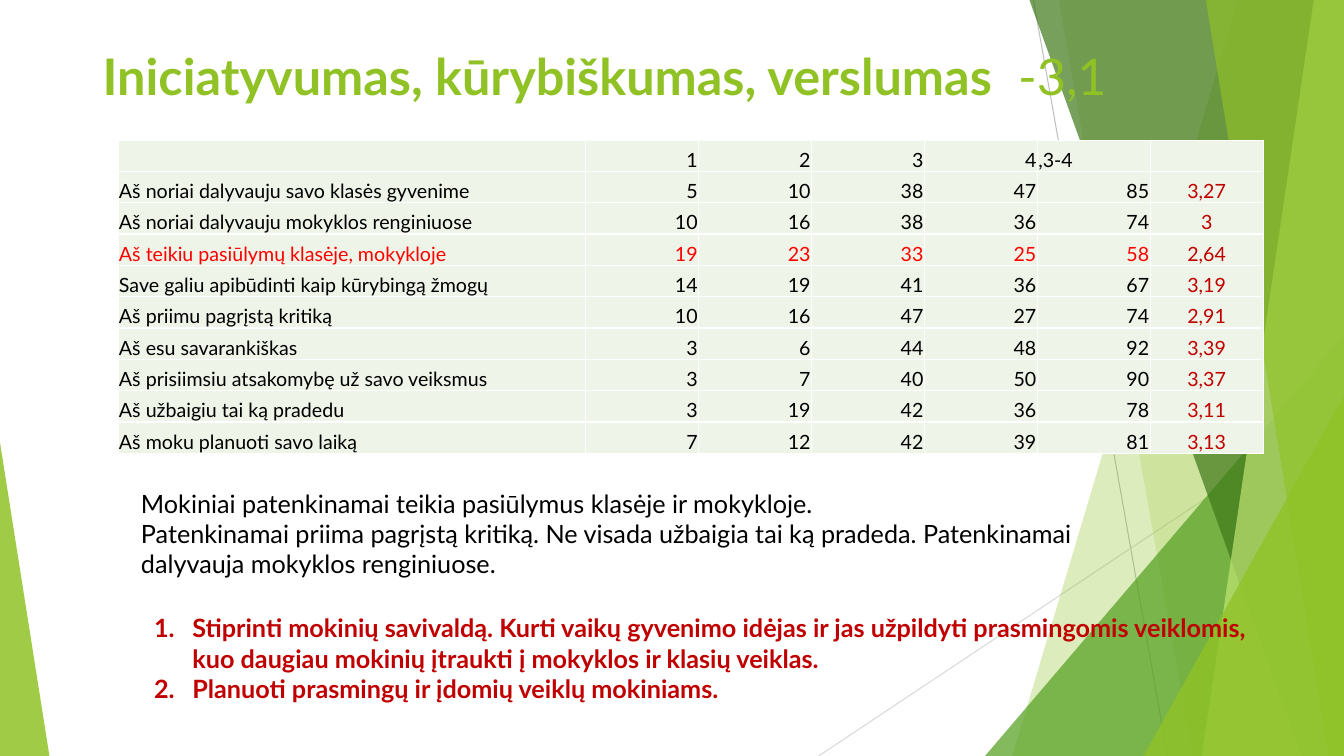
import lxml.etree
import pptx
import pptx.dml.color
import pptx.enum.shapes
import pptx.enum.text
import pptx.oxml.ns
import pptx.util

PX = 9144  # EMU per px, 100 px to the inch
SLIDE_W, SLIDE_H = 1333, 750
FONT = "Lato"

RGB = pptx.dml.color.RGBColor
LIME = RGB(0x90, 0xC2, 0x26)
GREEN = RGB(0x54, 0xA0, 0x21)
FOREST = RGB(0x3F, 0x78, 0x19)
PALE_LIME = RGB(0xC0, 0xE4, 0x74)
GREY = RGB(0xBF, 0xBF, 0xBF)
LIGHT_GREY = RGB(0xD9, 0xD9, 0xD9)
CELL = RGB(0xEE, 0xF4, 0xE8)
WHITE = RGB(0xFF, 0xFF, 0xFF)
BLACK = RGB(0, 0, 0)
RED = RGB(0xFF, 0, 0)
DARK_RED = RGB(0xC0, 0, 0)

ALIGN = pptx.enum.text.PP_ALIGN
WEAK_ROW = 3

SURVEY = [
    ("", "1", "2", "3", "4", ",3-4", ""),
    ("Aš noriai dalyvauju savo klasės gyvenime", 5, 10, 38, 47, 85, "3,27"),
    ("Aš noriai dalyvauju mokyklos renginiuose", 10, 16, 38, 36, 74, "3"),
    ("Aš teikiu pasiūlymų klasėje, mokykloje", 19, 23, 33, 25, 58, "2,64"),
    ("Save galiu apibūdinti kaip kūrybingą žmogų", 14, 19, 41, 36, 67, "3,19"),
    ("Aš priimu pagrįstą kritiką", 10, 16, 47, 27, 74, "2,91"),
    ("Aš esu savarankiškas", 3, 6, 44, 48, 92, "3,39"),
    ("Aš prisiimsiu atsakomybę už savo veiksmus", 3, 7, 40, 50, 90, "3,37"),
    ("Aš užbaigiu tai ką pradedu", 3, 19, 42, 36, 78, "3,11"),
    ("Aš moku planuoti savo laiką", 7, 12, 42, 39, 81, "3,13"),
]
FINDINGS = [
    "Mokiniai patenkinamai teikia pasiūlymus klasėje ir mokykloje.",
    "Patenkinamai priima pagrįstą kritiką. Ne visada užbaigia tai ką pradeda. "
    "Patenkinamai dalyvauja mokyklos renginiuose.",
]
ACTIONS = [
    "Stiprinti mokinių savivaldą. Kurti vaikų gyvenimo idėjas ir jas užpildyti "
    "prasmingomis veiklomis, kuo daugiau mokinių įtraukti į mokyklos ir klasių veiklas.",
    "Planuoti prasmingų ir įdomių veiklų mokiniams.",
]


def px(*lengths):
    return [pptx.util.Emu(length * PX) for length in lengths]


def add_child(parent, tag, **attributes):
    return lxml.etree.SubElement(parent, pptx.oxml.ns.qn(tag), attributes)


def style_font(font, size, color, bold=None):
    font.name, font.size, font.bold = FONT, pptx.util.Pt(size), bold
    font.color.rgb = color


def paint(shape, color, opacity):
    shape.shadow.inherit = False
    shape.fill.solid()
    shape.fill.fore_color.rgb = color
    shape.line.fill.background()
    tint = shape.fill._xPr.find(".//" + pptx.oxml.ns.qn("a:srgbClr"))
    add_child(tint, "a:alpha", val=str(opacity * 1000))


def add_ray(slide, start, end, color):
    ray = slide.shapes.add_connector(
        pptx.enum.shapes.MSO_CONNECTOR.STRAIGHT, *px(*start, *end))
    ray.line.color.rgb = color
    ray.line.width = pptx.util.Pt(0.75)
    add_child(ray._element.spPr, "a:effectLst")


def add_band(slide, box, top_x, bottom_x, color, opacity):
    """A band that runs from a slanted left edge to the right side of the box."""
    left, top, width, height = box
    right, bottom = left + width, top + height
    outline = slide.shapes.build_freeform(left + top_x, top, scale=PX)
    outline.add_line_segments(
        [(right, top), (right, bottom), (left + bottom_x, bottom)], close=True)
    paint(outline.convert_to_shape(), color, opacity)


def add_facet(slide, box, apex, color, opacity):
    facet = slide.shapes.add_shape(
        pptx.enum.shapes.MSO_SHAPE.ISOSCELES_TRIANGLE, *px(*box))
    facet.adjustments[0] = apex
    paint(facet, color, opacity)


def add_backdrop(slide, box):
    left, top, width, height = box
    right, bottom = left + width, top + height
    add_ray(slide, (left + 1025, top), (left + 1158, bottom), GREY)
    add_ray(slide, (right, top + 403), (left + 812, bottom), LIGHT_GREY)
    add_band(slide, box, 1228, 1004, LIME, 30)
    add_band(slide, box, 1050, 1183, LIME, 20)
    add_facet(slide, (right - 356, bottom - 417, 356, 417), 1, GREEN, 72)
    add_band(slide, box, 1021, 1291, FOREST, 70)
    add_band(slide, box, 1303, 1192, PALE_LIME, 70)
    add_band(slide, box, 1196, 1318, LIME, 65)
    add_facet(slide, (right - 199, bottom - 357, 199, 357), 1, LIME, 80)
    add_facet(slide, (left, bottom - 311, 49, 311), 0, LIME, 85)


def add_text_frame(slide, box):
    frame = slide.shapes.add_textbox(*px(*box)).text_frame
    frame.word_wrap = True
    return frame


def add_title(slide, box):
    heading = add_text_frame(slide, box).paragraphs[0]
    style_font(heading.font, 36, LIME)
    topic = heading.add_run()
    topic.text = "Iniciatyvumas, kūrybiškumas, verslumas"
    topic.font.bold = True
    heading.add_run().text = "  -3,1"


def add_borders(cell):
    properties = cell._tc.get_or_add_tcPr()
    for side in ("a:lnL", "a:lnR", "a:lnT", "a:lnB"):
        border = add_child(properties, side, w="12700")
        add_child(add_child(border, "a:solidFill"), "a:srgbClr", val=str(WHITE))


def fill_cell(cell, value, align, color):
    add_borders(cell)
    cell.fill.solid()
    cell.fill.fore_color.rgb = CELL
    cell.vertical_anchor = pptx.enum.text.MSO_ANCHOR.BOTTOM
    cell.margin_left, cell.margin_right, cell.margin_top, cell.margin_bottom = px(1, 1, 1, 0)
    entry = cell.text_frame.paragraphs[0]
    entry.text = str(value)
    entry.alignment = align
    style_font(entry.font, 14, color)


def add_survey_table(slide, box):
    columns = len(SURVEY[0])
    table = slide.shapes.add_table(len(SURVEY), columns, *px(*box)).table
    table.first_row = table.horz_banding = False
    statement_width, answer_width = px(464, 112)
    for index, column in enumerate(table.columns):
        column.width = answer_width if index else statement_width
    for r, answers in enumerate(SURVEY):
        for c, value in enumerate(answers):
            color = RED if r == WEAK_ROW else BLACK
            align = ALIGN.RIGHT
            if c == columns - 1:
                align, color = ALIGN.CENTER, DARK_RED
            elif c == 0 or value == ",3-4":
                align = ALIGN.LEFT
            fill_cell(table.cell(r, c), value, align, color)


def add_paragraphs(slide, box, lines, color, bold=None, numbered=False):
    frame = add_text_frame(slide, box)
    frame.text = "\n".join(lines)
    for paragraph in frame.paragraphs:
        style_font(paragraph.font, 18, color, bold)
        if numbered:
            properties = paragraph._p.get_or_add_pPr()
            properties.set("marL", str(38 * PX))
            properties.set("indent", str(-38 * PX))
            number = add_child(properties, "a:buAutoNum", type="arabicPeriod")
            properties.insert(0, number)  # numbering precedes the font


def main():
    deck = pptx.Presentation()
    deck.slide_width, deck.slide_height = px(SLIDE_W, SLIDE_H)
    slide = deck.slides.add_slide(deck.slide_layouts[6])

    # Green facets behind the content
    add_backdrop(slide, (0, 0, SLIDE_W, SLIDE_H))
    # Heading and survey results
    add_title(slide, (92, 40, 1150, 99))
    add_survey_table(slide, (117, 139, 1136, 311))
    # Findings and planned actions
    add_paragraphs(slide, (130, 479, 1000, 101), FINDINGS, BLACK)
    add_paragraphs(slide, (143, 603, 1135, 131), ACTIONS, DARK_RED, bold=True, numbered=True)

    deck.save("out.pptx")


if __name__ == "__main__":
    main()
